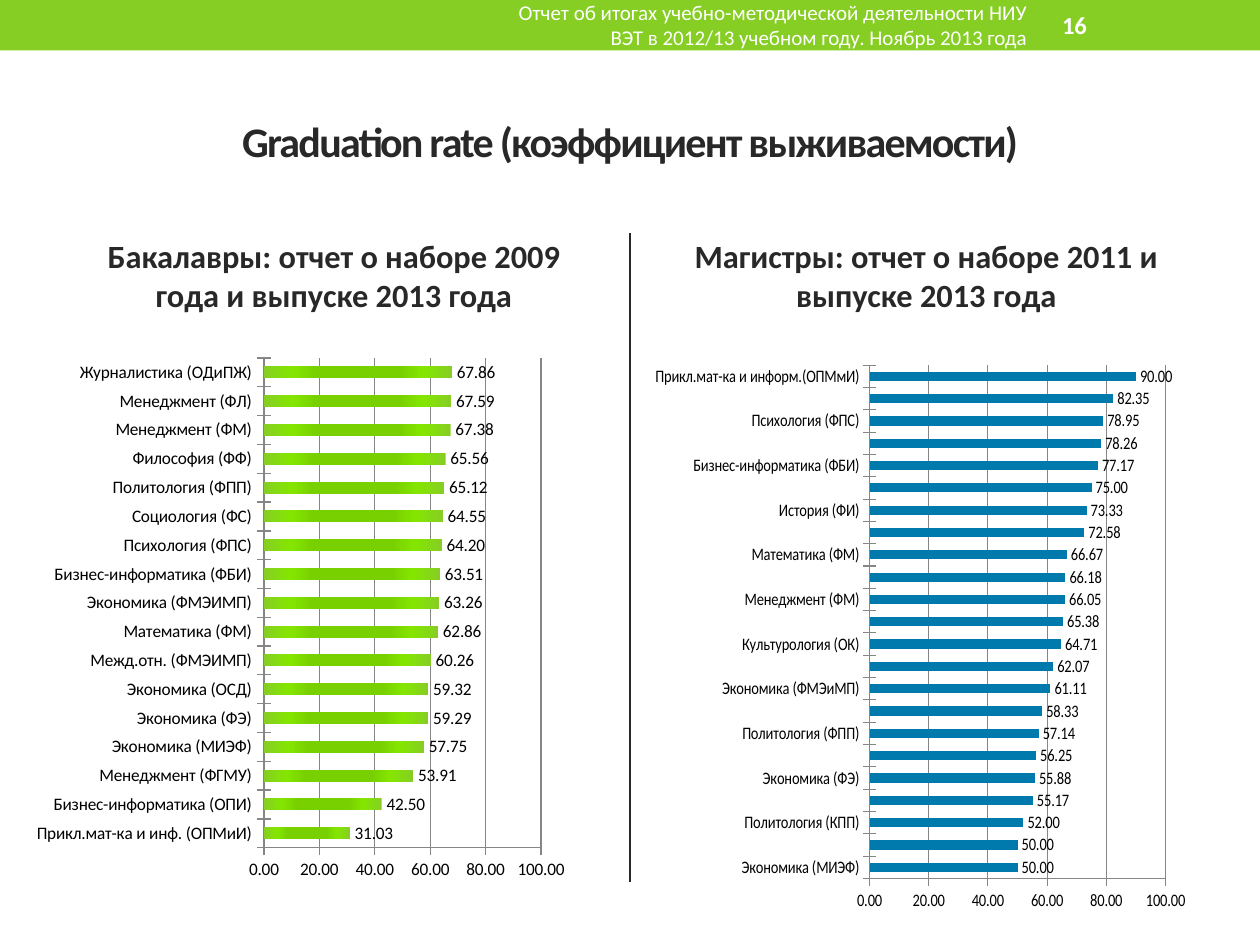
"""Build the graduation rate slide with two bar charts."""
import dataclasses

import lxml.etree
import pptx
import pptx.chart.data
import pptx.dml.color
import pptx.enum.chart
import pptx.enum.shapes
import pptx.enum.text
import pptx.oxml
import pptx.oxml.ns
import pptx.util

Cm = pptx.util.Cm
ALIGN = pptx.enum.text.PP_ALIGN


@dataclasses.dataclass(frozen=True)
class Theme:
    font: str = "Calibri"
    dark: str = "282828"
    white: str = "FFFFFF"
    black: str = "000000"
    grey: str = "868686"
    green: str = "86CE24"
    light: str = "84E600"
    deep: str = "78D000"
    blue: str = "007AAD"
    title: float = 24
    head: float = 18.5
    page: float = 14
    note: float = 12
    label: float = 10


THEME = Theme()

LEFT = [
    ("Прикл.мат-ка и инф. (ОПМиИ)", 31.03), ("Бизнес-информатика (ОПИ)", 42.5),
    ("Менеджмент (ФГМУ)", 53.91), ("Экономика (МИЭФ)", 57.75),
    ("Экономика (ФЭ)", 59.29), ("Экономика (ОСД)", 59.32),
    ("Межд.отн. (ФМЭИМП)", 60.26), ("Математика (ФМ)", 62.86),
    ("Экономика (ФМЭИМП)", 63.26), ("Бизнес-информатика (ФБИ)", 63.51),
    ("Психология (ФПС)", 64.2), ("Социология (ФС)", 64.55),
    ("Политология (ФПП)", 65.12), ("Философия (ФФ)", 65.56),
    ("Менеджмент (ФМ)", 67.38), ("Менеджмент (ФЛ)", 67.59),
    ("Журналистика (ОДиПЖ)", 67.86),
]
RIGHT = [
    ("Экономика (МИЭФ)", 50), ("Психология (ИО)", 50),
    ("Политология (КПП)", 52), ("Менеджмент (ФЛ)", 55.17),
    ("Экономика (ФЭ)", 55.88), ("Экономика (ОСДИИ)", 56.25),
    ("Политология (ФПП)", 57.14), ("Прогр.инж. (ОПИ)", 58.33),
    ("Экономика (ФМЭиМП)", 61.11), ("ГМУ (ФГиМУ)", 62.07),
    ("Культурология (ОК)", 64.71), ("ГМУ (ВШУ)", 65.38),
    ("Менеджмент (ФМ)", 66.05), ("Юриспруденция (ФП)", 66.18),
    ("Математика (ФМ)", 66.67), ("Журналистика (ФМ)", 72.58),
    ("История (ФИ)", 73.33), ("Социология (ФС)", 75),
    ("Бизнес-информатика (ФБИ)", 77.17), ("Межд.отн.(ММЭиМП)", 78.26),
    ("Психология (ФПС)", 78.95), ("Философия (ФФ)", 82.35),
    ("Прикл.мат-ка и информ.(ОПМмИ)", 90),
]


def tint(code):
    """Turn a hex code into a colour."""
    return pptx.dml.color.RGBColor.from_string(code)


def place(shape, box):
    """Move a shape to a box given in centimetres."""
    shape.left, shape.top, shape.width, shape.height = map(Cm, box)


def write(shape, text, *, size, color, bold=False, align=ALIGN.LEFT, track=0, gap=0):
    """Put formatted text, centred in height, into a shape."""
    frame = shape.text_frame
    frame.word_wrap = True
    frame.auto_size = pptx.enum.text.MSO_AUTO_SIZE.NONE
    frame.vertical_anchor = pptx.enum.text.MSO_ANCHOR.MIDDLE
    para = frame.paragraphs[0]
    para.alignment = align
    para.space_before = pptx.util.Pt(gap)
    run = para.add_run()
    run.text = text
    run.font.name = THEME.font
    run.font.size = pptx.util.Pt(size)
    run.font.bold = bold
    run.font.color.rgb = tint(color)
    if track:
        run._r.get_or_add_rPr().set("spc", str(track))


def band(slide, box):
    """Draw the green band along the top."""
    shape = slide.shapes.add_shape(
        pptx.enum.shapes.MSO_SHAPE.RECTANGLE, *map(Cm, box))
    shape.shadow.inherit = False
    shape.fill.solid()
    shape.fill.fore_color.rgb = tint(THEME.green)
    shape.line.fill.background()


def rule(slide, ends):
    """Draw a dark line between two points."""
    line = slide.shapes.add_connector(
        pptx.enum.shapes.MSO_CONNECTOR.STRAIGHT, *map(Cm, ends))
    line.line.color.rgb = tint(THEME.dark)
    line.line.width = pptx.util.Pt(1.5)
    lxml.etree.SubElement(line._element.spPr, pptx.oxml.ns.qn("a:effectLst"))


def pin(chart, area):
    """Fix the inner plot area as fractions of the chart."""
    root = chart._chartSpace.chart.plotArea
    for old in root.findall(pptx.oxml.ns.qn("c:layout")):
        root.remove(old)
    parts = [("layoutTarget", "inner"), ("xMode", "edge"), ("yMode", "edge")]
    parts += zip("xywh", area)
    body = "".join(f'<c:{tag} val="{val}"/>' for tag, val in parts)
    root.insert(0, pptx.oxml.parse_xml(
        f'<c:layout {pptx.oxml.ns.nsdecls("c")}>'
        f"<c:manualLayout>{body}</c:manualLayout></c:layout>"))


def shade(bars, stops):
    """Fill bars with a gradient that runs along them."""
    body = "".join(f'<a:gs pos="{spot * 1000}"><a:srgbClr val="{code}"/></a:gs>'
                   for spot, code in stops)
    prop = bars.format.fill._xPr
    bars.format.fill.background()
    prop.replace(prop.find(pptx.oxml.ns.qn("a:noFill")), pptx.oxml.parse_xml(
        f'<a:gradFill {pptx.oxml.ns.nsdecls("a")} rotWithShape="1">'
        f'<a:gsLst>{body}</a:gsLst><a:lin ang="0" scaled="0"/></a:gradFill>'))


def plot(slide, rows, box, area, color, gap):
    """Add a bar chart with value labels and return its series."""
    kinds = pptx.enum.chart
    data = pptx.chart.data.CategoryChartData(number_format="0.00")
    data.categories = [name for name, _ in rows]
    data.add_series("Series 1", [rate for _, rate in rows])
    chart = slide.shapes.add_chart(
        kinds.XL_CHART_TYPE.BAR_CLUSTERED, *map(Cm, box), data).chart
    chart.has_legend = chart.has_title = False
    chart.font.name = THEME.font
    chart.font.size = pptx.util.Pt(THEME.label)
    chart.font.color.rgb = tint(THEME.black)
    rates = chart.value_axis
    rates.minimum_scale, rates.maximum_scale, rates.major_unit = 0, 100, 20
    rates.has_major_gridlines = True
    rates.tick_labels.number_format = "0.00"
    rates.tick_labels.number_format_is_linked = False
    for axis in (rates, chart.category_axis):
        axis.major_tick_mark = kinds.XL_TICK_MARK.CROSS
        axis.format.line.color.rgb = tint(THEME.grey)
    rates.major_gridlines.format.line.color.rgb = tint(THEME.grey)
    bars = chart.plots[0]
    bars.gap_width = gap
    bars.vary_by_categories = False
    bars.has_data_labels = True
    tags = bars.data_labels
    tags.show_value = True
    tags.number_format, tags.number_format_is_linked = "0.00", False
    tags.position = kinds.XL_LABEL_POSITION.OUTSIDE_END
    fill = bars.series[0].format.fill
    fill.solid()
    fill.fore_color.rgb = tint(color)
    pin(chart, area)
    return bars.series[0]


def main():
    """Build and save the slide."""
    deck = pptx.Presentation()
    deck.slide_width, deck.slide_height = Cm(25.4), Cm(19.05)
    slide = deck.slides.add_slide(deck.slide_layouts[4])
    holds = {item.placeholder_format.idx: item for item in slide.placeholders}
    for spare in (2, 4):
        holds[spare]._element.getparent().remove(holds[spare]._element)

    band(slide, (0, 0, 25.4, 1.02))
    rule(slide, (12.7, 4.7, 12.7, 17.78))
    place(holds[0], (1.27, 1.47, 22.86, 2.74))
    write(holds[0], "Graduation rate (коэффициент выживаемости)", size=THEME.title,
          color=THEME.dark, bold=True, align=ALIGN.CENTER, track=-100)
    heads = [(1, 1.27, "Бакалавры: отчет о наборе 2009 года и выпуске 2013 года"),
             (3, 13.21, "Магистры: отчет о наборе 2011 и выпуске 2013 года")]
    for key, left, text in heads:
        place(holds[key], (left, 4.65, 10.92, 1.78))
        write(holds[key], text, size=THEME.head, color=THEME.dark, bold=True,
              align=ALIGN.CENTER, gap=3.7)

    note = slide.shapes.add_textbox(*map(Cm, (9.53, 0.05, 11.43, 0.91)))
    write(note, "Отчет об итогах учебно-методической деятельности НИУ ВЭТ "
          "в 2012/13 учебном году. Ноябрь 2013 года",
          size=THEME.note, color=THEME.white, align=ALIGN.RIGHT)
    page = slide.shapes.add_textbox(*map(Cm, (21.16, 0.05, 2.97, 0.91)))
    write(page, "16", size=THEME.page, color=THEME.white, bold=True)

    plot(slide, RIGHT, (13.21, 6.78, 10.92, 11.63), (0.27, 0.05, 0.66, 0.89),
         THEME.blue, 140)
    bars = plot(slide, LEFT, (0.74, 6.78, 10.92, 10.97), (0.41, 0.04, 0.52, 0.9),
                THEME.green, 140)
    shade(bars, [(0, THEME.green), (15, THEME.light), (28, THEME.deep),
                 (72, THEME.deep), (85, THEME.light), (100, THEME.green)])
    deck.save("out.pptx")


if __name__ == "__main__":
    main()
